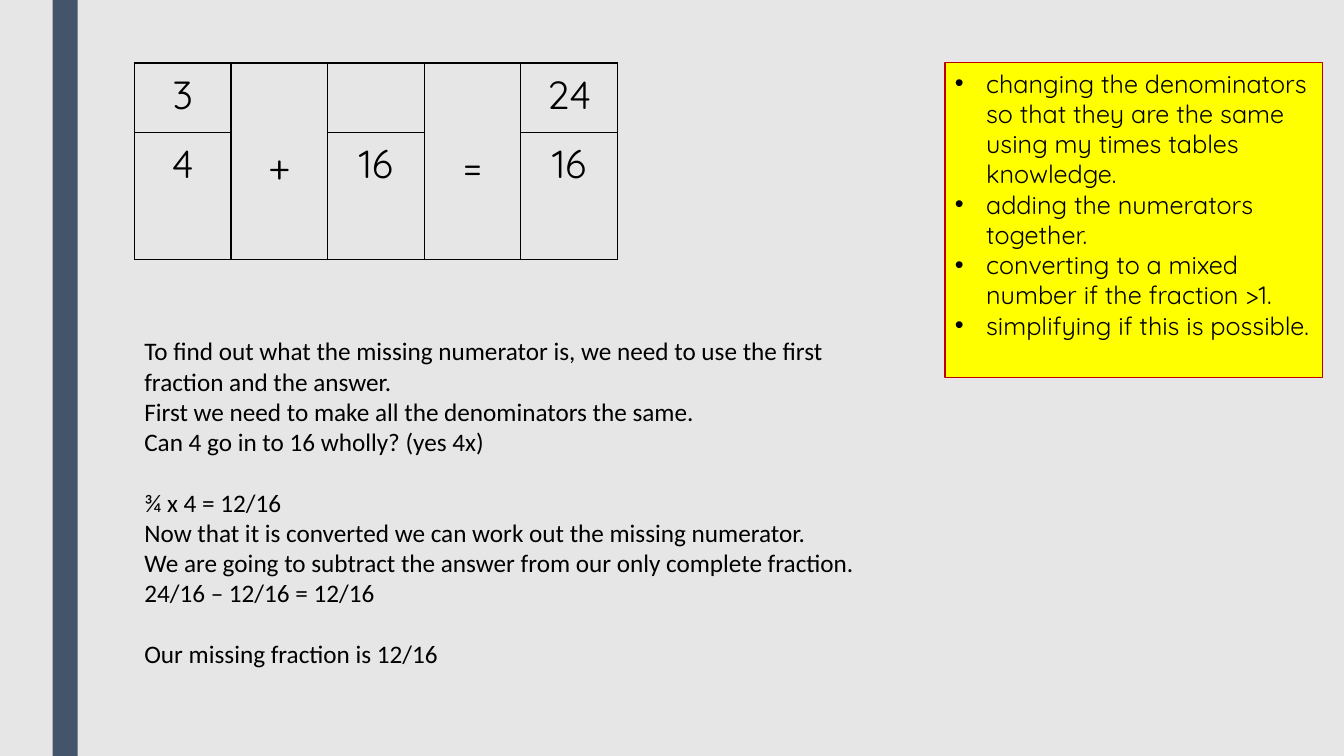
import pptx
import pptx.dml.color
import pptx.enum.shapes
import pptx.enum.text
import pptx.oxml
import pptx.oxml.ns
import pptx.util
from lxml import etree

RGBColor = pptx.dml.color.RGBColor
BACKGROUND = RGBColor(0xE7, 0xE6, 0xE6)
STRIPE = RGBColor(0x44, 0x54, 0x6A)
YELLOW = RGBColor(0xFF, 0xFF, 0x00)
RED = RGBColor(0xC0, 0x00, 0x00)
BLACK = RGBColor(0x00, 0x00, 0x00)

WIDTH, HEIGHT = pptx.util.Inches(13.333), pptx.util.Inches(7.5)
COLUMNS, ROWS = 64, 60
CENTER = pptx.enum.text.PP_ALIGN.CENTER
LINE_GAP = 21.6

STEPS = [
    "changing the denominators so that they are the same using my times tables knowledge.",
    "adding the numerators together.",
    "converting to a mixed number if the fraction >1.",
    "simplifying if this is possible.",
]
# Each group of lines is set apart from the one before by one line.
EXPLANATION = [
    [
        "To find out what the missing numerator is, we need to use the first fraction and the answer.",
        "First we need to make all the denominators the same.",
        "Can 4 go in to 16 wholly? (yes 4x)",
    ],
    [
        "¾ x 4 = 12/16",
        "Now that it is converted we can work out the missing numerator.",
        "We are going to subtract the answer from our only complete fraction.",
        "24/16 – 12/16 = 12/16",
    ],
    ["Our missing fraction is 12/16"],
]
FRACTIONS = {0: ("3", "4"), 2: ("", "16"), 4: ("24", "16")}
OPERATORS = {1: "+", 3: "="}


def across(columns):
    return round(WIDTH * columns / COLUMNS)


def down(rows):
    return round(HEIGHT * rows / ROWS)


def area(left, top, width, height):
    return across(left), down(top), across(width), down(height)


def write(frame, text, font="Calibri", size=18, align=None, bullet=False,
          before=0, after=0, spacing=None):
    """Add one paragraph, using the frame's first one while it is empty."""
    para = frame.paragraphs[0]
    if para.runs:
        para = frame.add_paragraph()
    para.alignment = align
    para.line_spacing = spacing
    para.space_before = pptx.util.Pt(before)
    para.space_after = pptx.util.Pt(after)
    if bullet:
        add_bullet(para)
    span = para.add_run()
    span.text = text
    span.font.name = font
    span.font.size = pptx.util.Pt(size)
    span.font.color.rgb = BLACK


def add_bullet(para):
    properties = para._p.get_or_add_pPr()
    indent = pptx.util.Inches(0.31)
    properties.set("marL", str(indent))
    properties.set("indent", str(-indent))
    for tag, name, value in (("a:buFont", "typeface", "Arial"), ("a:buChar", "char", "•")):
        etree.SubElement(properties, pptx.oxml.ns.qn(tag)).set(name, value)


def add_panel(page, place, fill, line=None):
    box = page.shapes.add_shape(pptx.enum.shapes.MSO_SHAPE.RECTANGLE, *place)
    box.shadow.inherit = False
    box.fill.solid()
    box.fill.fore_color.rgb = fill
    if line is None:
        box.line.fill.background()
    else:
        box.line.color.rgb = line
        box.line.width = pptx.util.Pt(0.75)
    return box


def add_steps(page, place):
    frame = add_panel(page, place, YELLOW, RED).text_frame
    frame.word_wrap = True
    frame.vertical_anchor = pptx.enum.text.MSO_ANCHOR.TOP
    for step in STEPS:
        write(frame, step, font="Quicksand", align=pptx.enum.text.PP_ALIGN.LEFT, bullet=True)


def add_explanation(page, place):
    frame = page.shapes.add_textbox(*place).text_frame
    frame.word_wrap = True
    for group_index, group in enumerate(EXPLANATION):
        for line_index, line in enumerate(group):
            starts_group = group_index > 0 and line_index == 0
            write(frame, line, before=LINE_GAP if starts_group else 0)


def add_borders(cell):
    properties = cell._tc.get_or_add_tcPr()
    for position, side in enumerate(("lnL", "lnR", "lnT", "lnB")):
        border = pptx.oxml.parse_xml(
            f'<a:{side} {pptx.oxml.ns.nsdecls("a")} w="{pptx.util.Pt(1)}">'
            f'<a:solidFill><a:srgbClr val="{BLACK}"/></a:solidFill></a:{side}>')
        properties.insert(position, border)


def fill_cell(cell, text, top=0):
    cell.margin_left = cell.margin_right = pptx.util.Inches(0.07)
    cell.margin_top = pptx.util.Inches(top)
    cell.margin_bottom = 0
    if text:
        write(cell.text_frame, text, font="Quicksand", size=28,
              align=CENTER, after=10, spacing=1.15)


def add_equation(page, place, row_heights):
    count = len(FRACTIONS) + len(OPERATORS)
    table = page.shapes.add_table(len(row_heights), count, *place).table
    table.first_row = table.horz_banding = False
    for row, height in zip(table.rows, row_heights):
        row.height = down(height)
    for cell in table.iter_cells():
        cell.fill.background()
        add_borders(cell)
    for column, parts in FRACTIONS.items():
        for row, number in enumerate(parts):
            fill_cell(table.cell(row, column), number)
    for column, sign in OPERATORS.items():
        table.cell(0, column).merge(table.cell(1, column))
        fill_cell(table.cell(0, column), sign, top=0.7)


def main():
    deck = pptx.Presentation()
    deck.slide_width, deck.slide_height = WIDTH, HEIGHT
    page = deck.slides.add_slide(deck.slide_layouts[6])
    page.background.fill.solid()
    page.background.fill.fore_color.rgb = BACKGROUND
    add_panel(page, area(2.5, 0, 1.2, ROWS), STRIPE)
    add_steps(page, area(45, 5, 18, 25))
    add_equation(page, area(6.4, 5, 23, 15.1), (5.5, 9.6))
    add_explanation(page, area(6.4, 26.25, 34.8, 30))
    deck.save("out.pptx")


if __name__ == "__main__":
    main()
